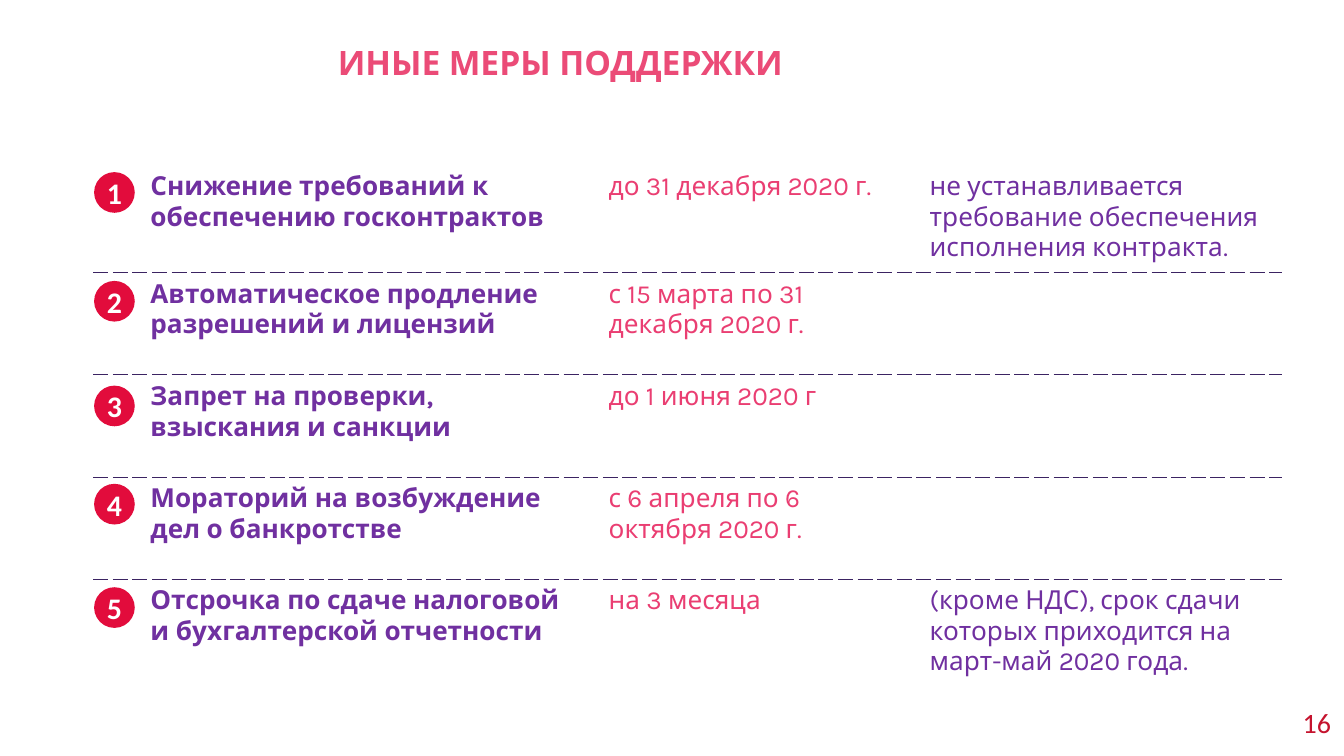
"""Builds the slide listing further support measures with their terms."""
from lxml import etree
from pptx import Presentation
from pptx.dml.color import RGBColor
from pptx.enum.shapes import MSO_SHAPE
from pptx.enum.text import MSO_ANCHOR, PP_ALIGN
from pptx.oxml.ns import qn
from pptx.util import Pt

OVAL = MSO_SHAPE.OVAL
TOP, MIDDLE = MSO_ANCHOR.TOP, MSO_ANCHOR.MIDDLE
LEFT, CENTER, RIGHT = PP_ALIGN.LEFT, PP_ALIGN.CENTER, PP_ALIGN.RIGHT

TITLE_PINK = RGBColor(0xEB, 0x4B, 0x77)
TERM_PINK = RGBColor(0xEA, 0x3E, 0x72)
PURPLE = RGBColor(0x70, 0x30, 0xA0)
RED = RGBColor(0xE2, 0x0C, 0x3C)
PAGE_RED = RGBColor(0xC5, 0x13, 0x2E)
WHITE = RGBColor(0xFF, 0xFF, 0xFF)
RULE = RGBColor(0x3B, 0x23, 0x62)

TITLE = "ИНЫЕ МЕРЫ ПОДДЕРЖКИ"
PAGE_NUMBER = "16"
MEASURES = [
    ("Снижение требований к обеспечению госконтрактов", "до 31 декабря 2020 г.",
     "не устанавливается требование обеспечения исполнения контракта."),
    ("Автоматическое продление разрешений и лицензий",
     "с 15 марта по 31 декабря 2020 г.", ""),
    ("Запрет на проверки, взыскания и санкции", "до 1 июня 2020 г", ""),
    ("Мораторий на возбуждение дел о банкротстве",
     "с 6 апреля по 6 октября 2020 г.", ""),
    ("Отсрочка по сдаче налоговой и бухгалтерской отчетности", "на 3 месяца",
     "(кроме НДС), срок сдачи которых приходится на март-май 2020 года."),
]
BADGE_TOPS = [92.2, 150.5, 206.6, 259.2, 314.6]
BADGE_SIZE = 21.8
TABLE_LEFT, TABLE_TOP = 50.4, 88.5
COLUMN_WIDTHS = [23, 245.5, 172, 195.5]
ROW_HEIGHT = 54.7
COLUMN_STYLES = [(PURPLE, True), (TERM_PINK, False), (PURPLE, False)]


def write(frame, text, font_name, size, color, bold=False, align=LEFT):
    paragraph = frame.paragraphs[0]
    paragraph.alignment = align
    run = paragraph.add_run()
    run.text = text
    run.font.name = font_name
    run.font.size = Pt(size)
    run.font.bold = bold
    run.font.color.rgb = color


def set_frame(frame, anchor, horizontal, vertical, wrap):
    frame.vertical_anchor = anchor
    frame.margin_left = frame.margin_right = Pt(horizontal)
    frame.margin_top = frame.margin_bottom = Pt(vertical)
    frame.word_wrap = wrap


def add_text(slide, box, text, font_name, size, color, bold, align, inset):
    frame = slide.shapes.add_textbox(*map(Pt, box)).text_frame
    set_frame(frame, TOP, inset, 3, True)
    write(frame, text, font_name, size, color, bold, align)


def add_dashed_border(cell, side):
    properties = cell._tc.get_or_add_tcPr()
    line = etree.Element(qn(f"a:{side}"), w=str(Pt(0.5)))
    fill = etree.SubElement(line, qn("a:solidFill"))
    etree.SubElement(fill, qn("a:srgbClr"), val=str(RULE))
    etree.SubElement(line, qn("a:prstDash"), val="dash")
    properties.insert(0, line)


def add_measures(slide):
    table = slide.shapes.add_table(
        len(MEASURES), len(COLUMN_WIDTHS), Pt(TABLE_LEFT), Pt(TABLE_TOP),
        Pt(sum(COLUMN_WIDTHS)), Pt(ROW_HEIGHT * len(MEASURES))).table
    table.first_row = table.horz_banding = False
    for column, width in zip(table.columns, COLUMN_WIDTHS):
        column.width = Pt(width)
    for index, (row, measure) in enumerate(zip(table.rows, MEASURES)):
        row.height = Pt(ROW_HEIGHT)
        for cell in row.cells:
            cell.fill.background()
            if index < len(MEASURES) - 1:
                add_dashed_border(cell, "lnB")
            if index > 0:
                add_dashed_border(cell, "lnT")
        for column, (text, (color, bold)) in enumerate(zip(measure, COLUMN_STYLES), 1):
            if text:
                write(row.cells[column].text_frame, text, "Karla", 14, color, bold)


def add_badge(slide, number, top):
    badge = slide.shapes.add_shape(
        OVAL, Pt(TABLE_LEFT), Pt(top), Pt(BADGE_SIZE), Pt(BADGE_SIZE))
    badge.shadow.inherit = False
    badge.fill.solid()
    badge.fill.fore_color.rgb = RED
    badge.line.fill.background()
    set_frame(badge.text_frame, MIDDLE, 0, 0, False)
    write(badge.text_frame, str(number), "Calibri", 16, WHITE, True, CENTER)


def main():
    presentation = Presentation()
    presentation.slide_width, presentation.slide_height = Pt(720), Pt(405)
    slide = presentation.slides.add_slide(presentation.slide_layouts[6])
    add_text(slide, (106.5, 19.5, 387.5, 49), TITLE, "Karla", 18,
             TITLE_PINK, True, CENTER, 0)
    add_text(slide, (686, 375, 32, 21.6), PAGE_NUMBER, "Calibri", 15,
             PAGE_RED, False, RIGHT, 5)
    add_measures(slide)
    for number, top in enumerate(BADGE_TOPS, 1):
        add_badge(slide, number, top)
    presentation.save("out.pptx")


if __name__ == "__main__":
    main()
